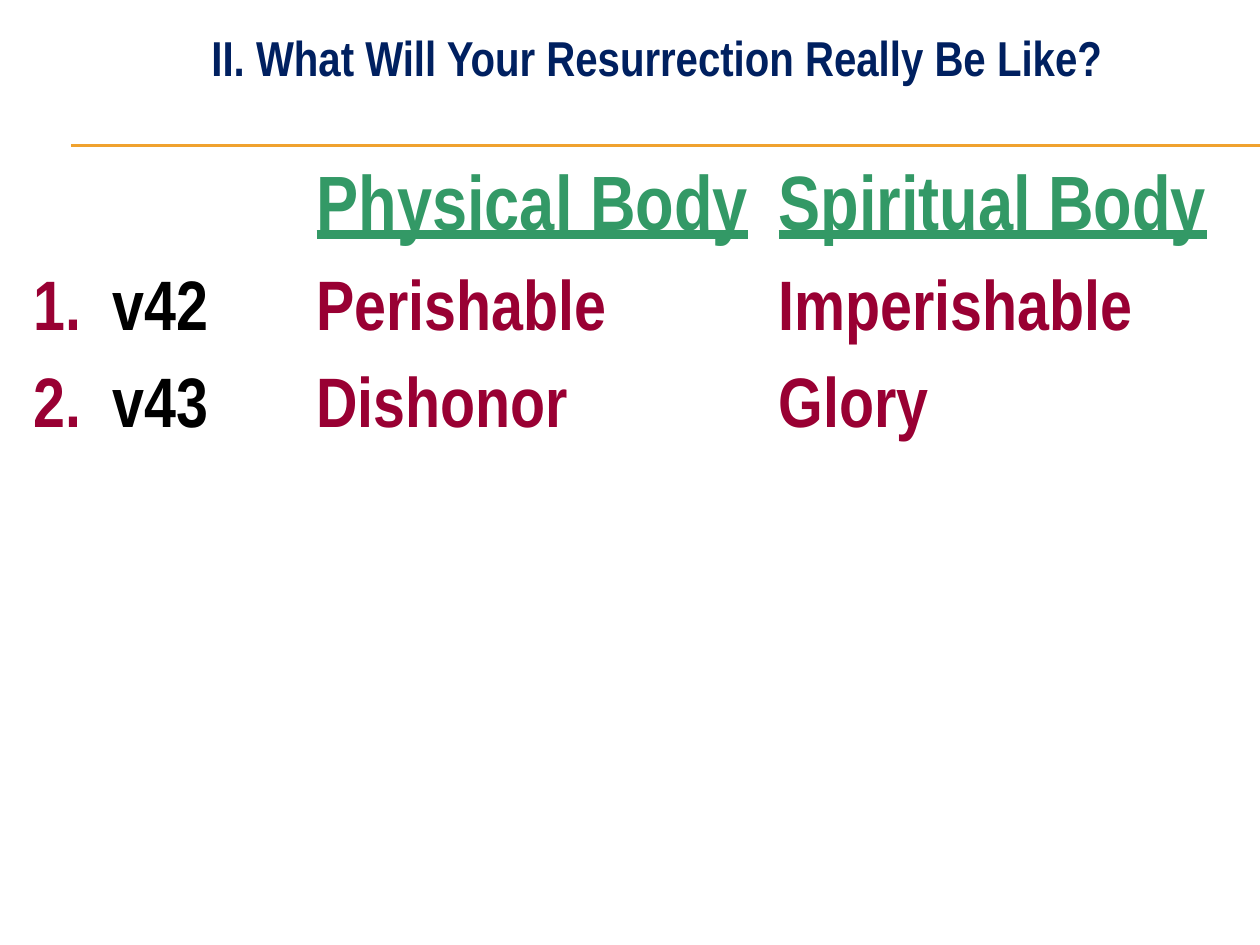
from lxml import etree
from pptx import Presentation
from pptx.dml.color import RGBColor
from pptx.enum.shapes import MSO_CONNECTOR
from pptx.enum.text import PP_ALIGN
from pptx.oxml.ns import qn
from pptx.util import Pt

PX = 914400 // 126
THEME = {
    "font": "Arial Narrow",
    "title": "002060", "heading": "339966", "body": "990033",
    "verse": "000000", "rule": "F0A22E",
    "title_size": 28, "heading_size": 44, "body_size": 40,
}


def write(paragraph, text, color="body", size="body_size", underline=False):
    run = paragraph.add_run()
    run.text = text
    run.font.name = THEME["font"]
    run.font.size = Pt(THEME[size])
    run.font.bold = True
    run.font.underline = underline
    run.font.color.rgb = RGBColor.from_string(THEME[color])


prs = Presentation()
prs.slide_width = 1260 * PX
prs.slide_height = 945 * PX
slide = prs.slides.add_slide(prs.slide_layouts[6])

for y in (145, 146):
    rule = slide.shapes.add_connector(
        MSO_CONNECTOR.STRAIGHT, 71 * PX, y * PX, 1260 * PX, y * PX)
    rule.line.color.rgb = RGBColor.from_string(THEME["rule"])
    rule.line.width = Pt(0.75)
    etree.SubElement(rule._element.spPr, qn("a:effectLst"))

comparison = slide.shapes.add_table(
    3, 3, 21 * PX, 168 * PX, 1218 * PX, 299 * PX).table
comparison.first_row = False
comparison.horz_banding = False
for column, width in zip(comparison.columns, (283, 462, 473)):
    column.width = width * PX
for row, height in zip(comparison.rows, (105, 97, 97)):
    row.height = height * PX
for cell in comparison.iter_cells():
    cell.fill.background()

for column, heading in enumerate(("Physical Body", "Spiritual Body"), start=1):
    write(comparison.cell(0, column).text_frame.paragraphs[0], heading,
          color="heading", size="heading_size", underline=True)

contrasts = [
    ("v42", "Perishable", "Imperishable"),
    ("v43", "Dishonor", "Glory"),
]
for number, (verse, physical, spiritual) in enumerate(contrasts, start=1):
    reference, before, after = (
        cell.text_frame.paragraphs[0] for cell in comparison.rows[number].cells)
    tabs = etree.SubElement(reference._p.get_or_add_pPr(), qn("a:tabLst"))
    etree.SubElement(tabs, qn("a:tab"), pos=str(79 * PX), algn="l")
    write(reference, f"{number}.\t")
    write(reference, verse, color="verse")
    write(before, physical)
    write(after, spiritual)

title = slide.shapes.add_textbox(116 * PX, 21 * PX, 1081 * PX, 72 * PX).text_frame
title.word_wrap = True
title.paragraphs[0].alignment = PP_ALIGN.CENTER
write(title.paragraphs[0], "II. What Will Your Resurrection Really Be Like?",
      color="title", size="title_size")

prs.save("out.pptx")
